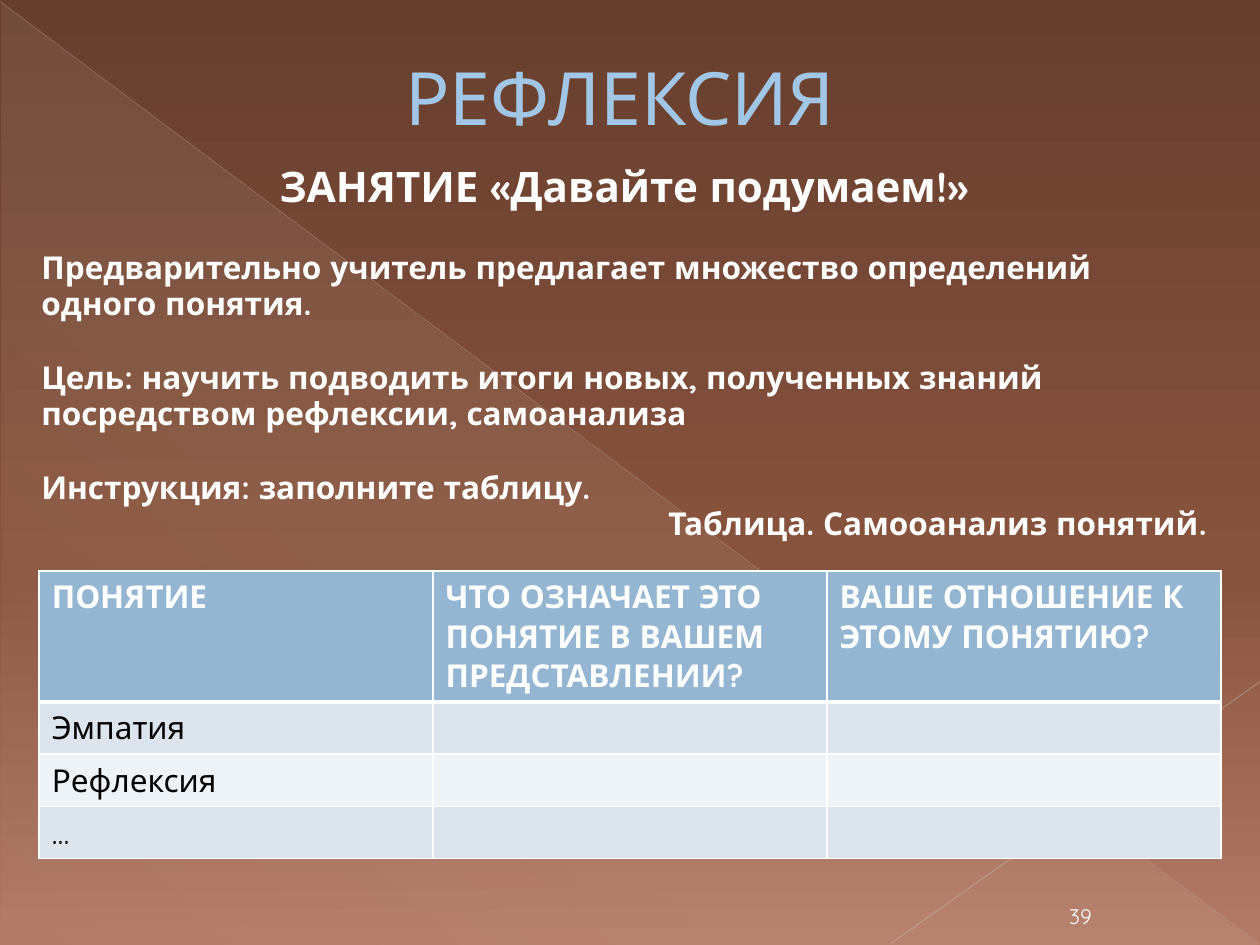
"""Build the reflection lesson slide with its table of concepts."""
from lxml.etree import SubElement, Element
from pptx import Presentation
from pptx.dml.color import RGBColor
from pptx.enum.shapes import MSO_CONNECTOR as Link, MSO_SHAPE as Kind
from pptx.enum.text import MSO_ANCHOR as Anchor, MSO_AUTO_SIZE as Fit, PP_ALIGN as Align
from pptx.oxml.ns import qn
from pptx.util import Cm, Pt

FONT = "Quicksand"
HUES = {
    "white": "FFFFFF", "black": "000000", "title": "A1C6E6", "head": "94B6D2",
    "odd": "DCE5EE", "even": "EEF3F7", "sand": "EBDDC3", "ray": "C8BCB8",
    "beam": "CEC3BF", "dark": "673E2E", "brown": "88533D", "clay": "B37B67",
}
TITLE = "РЕФЛЕКСИЯ"
BODY = [
    ("ЗАНЯТИЕ «Давайте подумаем!»", 24, Align.CENTER, 0),
    ("Предварительно учитель предлагает множество определений одного понятия.", 18, Align.LEFT, 21.5),
    ("Цель: научить подводить итоги новых, полученных знаний посредством рефлексии, самоанализа",
     18, Align.LEFT, 21.5),
    ("Инструкция: заполните таблицу.", 18, Align.LEFT, 21.5),
    ("Таблица. Самооанализ понятий.", 18, Align.RIGHT, 0),
]
ROWS = [
    ("ПОНЯТИЕ", "ЧТО ОЗНАЧАЕТ ЭТО ПОНЯТИЕ В ВАШЕМ ПРЕДСТАВЛЕНИИ?", "ВАШЕ ОТНОШЕНИЕ К ЭТОМУ ПОНЯТИЮ?"),
    ("Эмпатия", "", ""),
    ("Рефлексия", "", ""),
    ("…", "", ""),
]
NUMBER = "39"
SKY = [(0, "dark", 100), (60, "brown", 100), (100, "clay", 100)]
GLOW = [(0, "sand", 10), (70, "sand", 8), (100, "sand", 1)]
LINES = [
    ((0, 0.03, 25.37, 19.02), "ray", 0.39, 35),
    ((25.4, 13.74, 17.96, 19.02), "beam", 0.47, 45),
]


def hue(name):
    return RGBColor.from_string(HUES[name])


def fade(fill, root, stops, angle):
    fill.solid()
    old = root.find(".//" + qn("a:solidFill"))
    grad = Element(qn("a:gradFill"), rotWithShape="1")
    marks = SubElement(grad, qn("a:gsLst"))
    for pos, name, alpha in stops:
        mark = SubElement(marks, qn("a:gs"), pos=str(pos * 1000))
        tint = SubElement(mark, qn("a:srgbClr"), val=HUES[name])
        SubElement(tint, qn("a:alpha"), val=str(alpha * 1000))
    SubElement(grad, qn("a:lin"), ang=str(angle * 60000), scaled="0")
    old.getparent().replace(old, grad)


def style(para, size, name, bold=False, align=Align.LEFT):
    para.alignment = align
    font = para.font
    font.name, font.size, font.bold = FONT, Pt(size), bold
    font.color.rgb = hue(name)


def place(shape, *box):
    shape.left, shape.top, shape.width, shape.height = map(Cm, box)


def draw_back(slide):
    fade(slide.background.fill, slide._element, SKY, 90)
    wedge = slide.shapes.add_shape(Kind.RIGHT_TRIANGLE, *map(Cm, (0.03, 0.05, 25.35, 19)))
    wedge.shadow.inherit = False
    fade(wedge.fill, wedge._element, GLOW, 133)
    wedge.line.fill.background()
    for ends, name, width, alpha in LINES:
        line = slide.shapes.add_connector(Link.STRAIGHT, *map(Cm, ends))
        line.line.width = Pt(width)
        line.line.color.rgb = hue(name)
        props = line._element.spPr
        SubElement(props.find(".//" + qn("a:srgbClr")), qn("a:alpha"), val=str(alpha * 1000))
        SubElement(props, qn("a:effectLst"))


def draw_text(slide):
    title, body = slide.placeholders
    for holder in (title, body):
        slide.shapes._spTree.append(holder._element)
    place(title, 0.4, 0, 22.86, 3.88)
    title.text_frame.text = TITLE
    title.text_frame.auto_size = Fit.NONE
    para = title.text_frame.paragraphs[0]
    style(para, 42, "title", align=Align.CENTER)
    para._p.get_or_add_pPr().set("marL", str(Cm(1.35)))
    place(body, 0.58, 3.18, 24, 15.14)
    frame = body.text_frame
    frame.auto_size = Fit.NONE
    frame.text = "\n".join(item[0] for item in BODY)
    for para, (_, size, align, gap) in zip(frame.paragraphs, BODY):
        style(para, size, "white", True, align)
        para.space_before, para.space_after = Pt(gap), Pt(0)
        para.line_spacing = 0.96
        props = para._p.get_or_add_pPr()
        props.set("marL", "0")
        props.set("indent", "0")
        props.insert_element_before(Element(qn("a:buNone")), "a:tabLst", "a:defRPr", "a:extLst")


def edge(cell, row):
    props = cell._tc.get_or_add_tcPr()
    wide = {0: "lnB", 1: "lnT"}.get(row)
    for spot, side in enumerate(("lnL", "lnR", "lnT", "lnB")):
        line = Element(qn("a:" + side), w=str(Pt(3 if side == wide else 1)))
        paint = SubElement(line, qn("a:solidFill"))
        SubElement(paint, qn("a:srgbClr"), val=HUES["white"])
        props.insert(spot, line)


def draw_table(slide):
    box = map(Cm, (0.79, 11.51, 23.82, 5.6))
    table = slide.shapes.add_table(len(ROWS), len(ROWS[0]), *box).table
    for col in table.columns:
        col.width = Cm(7.94)
    for row, texts in enumerate(ROWS):
        table.rows[row].height = Cm(1.03 if row else 2.51)
        for col, text in enumerate(texts):
            cell = table.cell(row, col)
            cell.text = text
            style(cell.text_frame.paragraphs[0], 18, "black" if row else "white", not row)
            cell.fill.solid()
            cell.fill.fore_color.rgb = hue(("odd" if row % 2 else "even") if row else "head")
            edge(cell, row)


def draw_page(slide):
    frame = slide.shapes.add_textbox(*map(Cm, (21.08, 18.01, 1.4, 0.84))).text_frame
    frame.word_wrap = True
    frame.vertical_anchor = Anchor.BOTTOM
    frame.text = NUMBER
    style(frame.paragraphs[0], 12, "white", align=Align.CENTER)


def main():
    deck = Presentation()
    deck.slide_width, deck.slide_height = Cm(25.4), Cm(19.05)
    slide = deck.slides.add_slide(deck.slide_layouts[1])
    draw_back(slide)
    draw_text(slide)
    draw_table(slide)
    draw_page(slide)
    deck.save("out.pptx")


if __name__ == "__main__":
    main()
